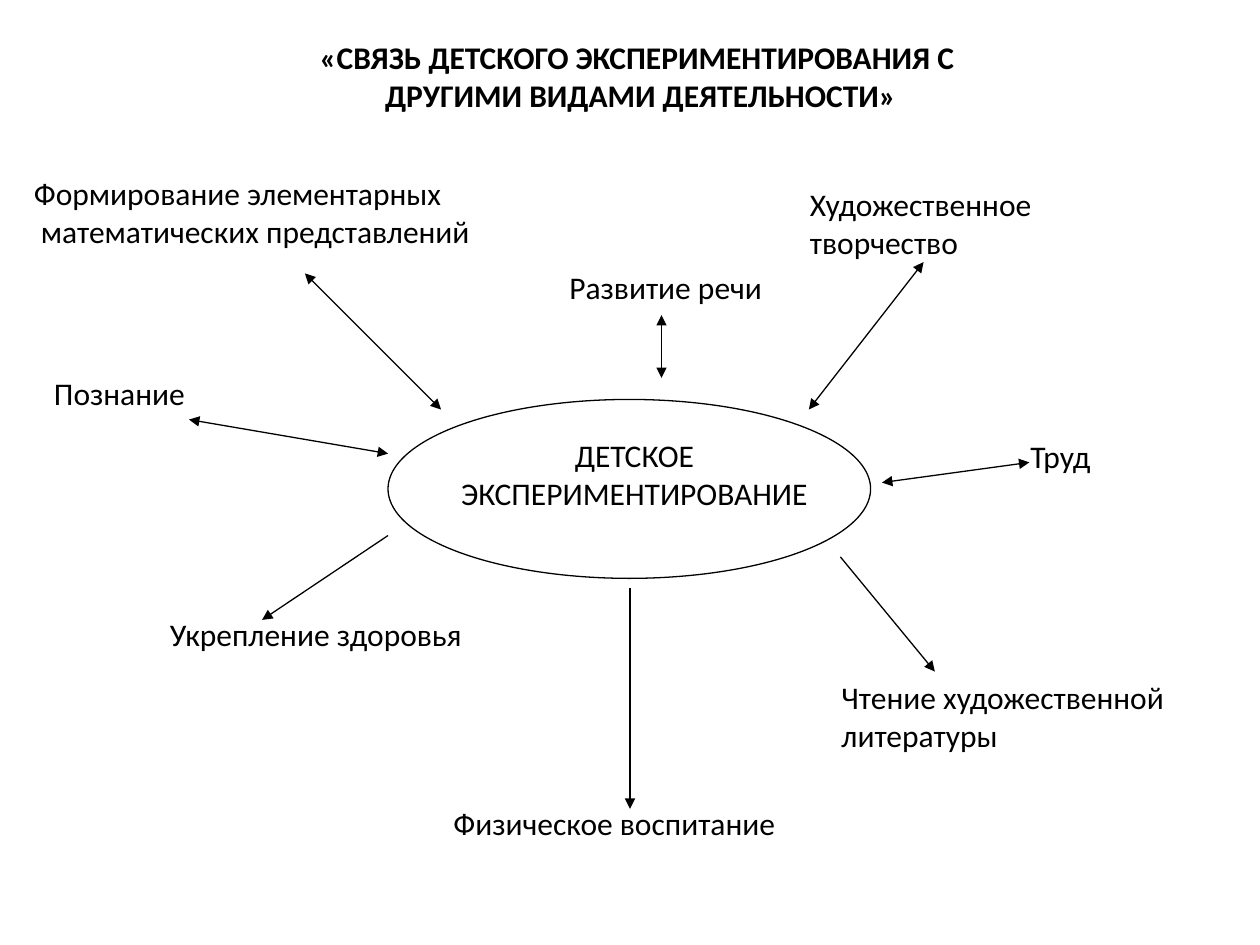
from dataclasses import dataclass

from lxml.etree import SubElement
from pptx import Presentation
from pptx.dml.color import RGBColor
from pptx.enum.shapes import MSO_CONNECTOR, MSO_SHAPE
from pptx.enum.text import MSO_ANCHOR, MSO_AUTO_SIZE, PP_ALIGN
from pptx.oxml.ns import qn
from pptx.util import Inches, Pt


@dataclass(frozen=True)
class Theme:
    ink: RGBColor = RGBColor(0, 0, 0)
    paper: RGBColor = RGBColor(255, 255, 255)
    font: str = "Calibri"
    size: int = 18
    stroke: float = 0.75


def apply(target, values):
    for name, value in values.items():
        setattr(target, name, value)


class Diagram:
    def __init__(self, slide, theme):
        self.slide = slide
        self.theme = theme
        slide.background.fill.solid()
        slide.background.fill.fore_color.rgb = theme.paper

    def set_lines(self, frame, lines, align=PP_ALIGN.LEFT, bold=False, wrap=False):
        apply(frame, {
            "word_wrap": wrap,
            "auto_size": MSO_AUTO_SIZE.SHAPE_TO_FIT_TEXT,
            "vertical_anchor": MSO_ANCHOR.TOP,
        })
        for number, line in enumerate(lines):
            paragraph = frame.add_paragraph() if number else frame.paragraphs[0]
            paragraph.alignment = align
            run = paragraph.add_run()
            run.text = line
            apply(run.font, {"name": self.theme.font, "size": Pt(self.theme.size), "bold": bold})
            run.font.color.rgb = self.theme.ink

    def title(self, box, lines):
        heading = self.slide.shapes.title
        apply(heading, dict(zip(("left", "top", "width", "height"), map(Inches, box))))
        self.set_lines(heading.text_frame, lines, PP_ALIGN.CENTER, bold=True)

    def label(self, box, lines):
        caption = self.slide.shapes.add_textbox(*map(Inches, box))
        self.set_lines(caption.text_frame, lines)

    def hub(self, text_box, oval_box, lines):
        group = self.slide.shapes.add_group_shape()
        caption = group.shapes.add_textbox(*map(Inches, text_box))
        self.set_lines(caption.text_frame, lines, PP_ALIGN.CENTER, wrap=True)
        oval = group.shapes.add_shape(MSO_SHAPE.OVAL, *map(Inches, oval_box))
        oval.shadow.inherit = False
        oval.fill.background()
        self.outline(oval)

    def outline(self, shape):
        shape.line.color.rgb = self.theme.ink
        shape.line.width = Pt(self.theme.stroke)

    def arrow(self, start, end, ends):
        link = self.slide.shapes.add_connector(
            MSO_CONNECTOR.STRAIGHT, *map(Inches, start + end))
        self.outline(link)
        stroke = link.line._get_or_add_ln()
        for tag in ends:
            SubElement(stroke, qn(tag), type="triangle")
        SubElement(link._element.spPr, qn("a:effectLst"))


TITLE = ("«СВЯЗЬ ДЕТСКОГО ЭКСПЕРИМЕНТИРОВАНИЯ С ", "ДРУГИМИ ВИДАМИ ДЕЯТЕЛЬНОСТИ»")
HUB = ("ДЕТСКОЕ", "ЭКСПЕРИМЕНТИРОВАНИЕ")
ONE_WAY = ("a:tailEnd",)
TWO_WAY = ("a:headEnd", "a:tailEnd")

ACTIVITIES = [
    ((0.33, 2.92, 1.41, 0.4), ("Познание",)),
    ((8.08, 3.42, 0.76, 0.4), ("Труд",)),
    ((4.42, 2.08, 1.97, 0.4), ("Развитие речи",)),
    ((6.33, 1.42, 2.22, 0.7), ("Художественное", "творчество")),
    ((0.17, 1.33, 4.01, 0.7), ("Формирование элементарных", " математических представлений")),
    ((6.58, 5.33, 3.02, 0.7), ("Чтение художественной", "литературы")),
    ((1.25, 4.83, 2.74, 0.4), ("Укрепление здоровья",)),
    ((3.5, 6.33, 2.98, 0.4), ("Физическое воспитание",)),
]

LINKS = [
    ((2.42, 2.17), (3.5, 3.25), TWO_WAY),
    ((1.5, 3.33), (3.08, 3.6), TWO_WAY),
    ((7.33, 2.08), (6.42, 3.25), TWO_WAY),
    ((5.25, 2.5), (5.25, 3), TWO_WAY),
    ((8.17, 3.67), (7, 3.83), TWO_WAY),
    ((3.08, 4.25), (2.08, 4.92), ONE_WAY),
    ((5, 4.67), (5, 6.42), ONE_WAY),
    ((6.67, 4.42), (7.42, 5.33), ONE_WAY),
]


def main():
    deck = Presentation()
    apply(deck, {"slide_width": Inches(10), "slide_height": Inches(7.5)})
    diagram = Diagram(deck.slides.add_slide(deck.slide_layouts[5]), Theme())
    diagram.title((2.41, 0.25, 5.35, 0.71), TITLE)
    diagram.hub((3.24, 3.41, 3.59, 0.7), (3.08, 3.17, 3.83, 1.42), HUB)
    for box, lines in ACTIVITIES:
        diagram.label(box, lines)
    for start, end, ends in LINKS:
        diagram.arrow(start, end, ends)
    deck.save("out.pptx")


if __name__ == "__main__":
    main()
